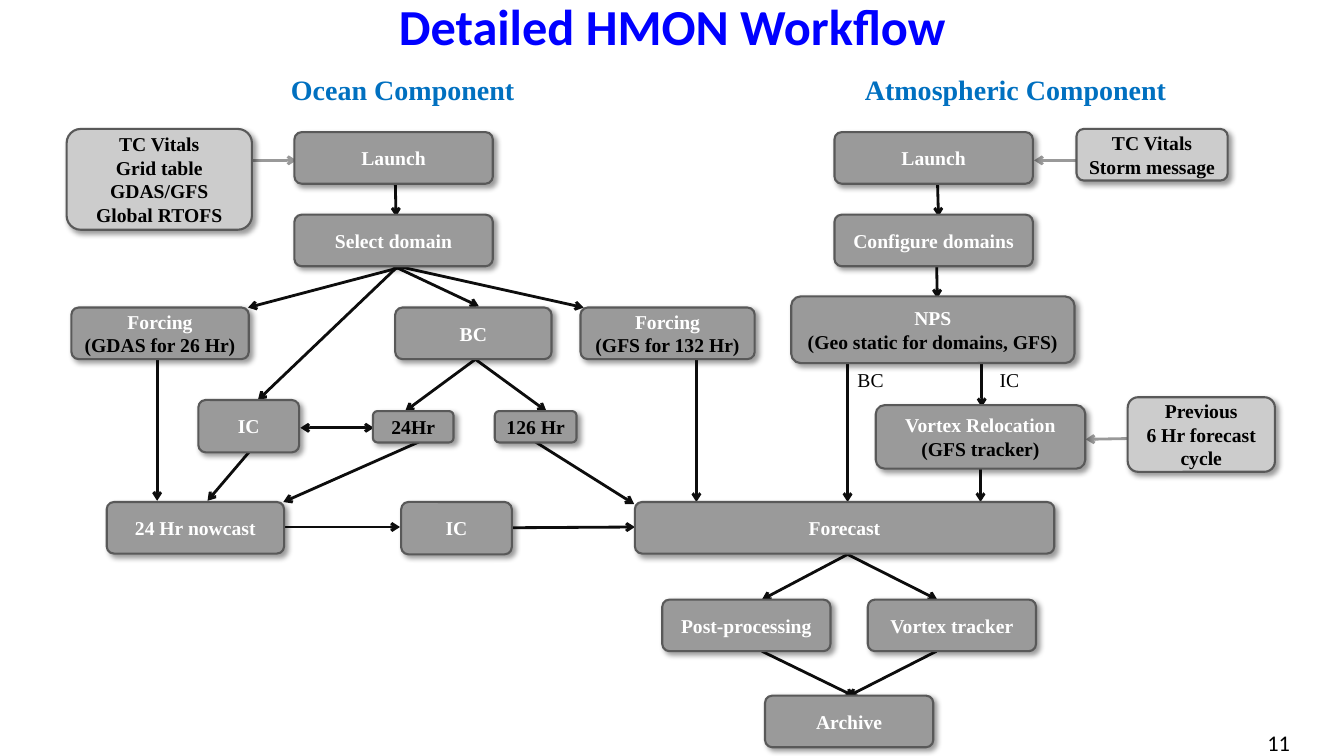
from dataclasses import dataclass

from lxml import etree
from pptx import Presentation
from pptx.dml.color import RGBColor
from pptx.enum.shapes import MSO_CONNECTOR, MSO_SHAPE
from pptx.enum.text import MSO_ANCHOR, PP_ALIGN
from pptx.oxml import parse_xml
from pptx.oxml.ns import nsdecls, qn
from pptx.util import Cm, Pt

STRAIGHT = MSO_CONNECTOR.STRAIGHT
ROUNDED = MSO_SHAPE.ROUNDED_RECTANGLE
TOP, MIDDLE = MSO_ANCHOR.TOP, MSO_ANCHOR.MIDDLE
LEFT, CENTER, RIGHT = PP_ALIGN.LEFT, PP_ALIGN.CENTER, PP_ALIGN.RIGHT


@dataclass(frozen=True)
class Theme:
    title: str = "0000FF"
    heading: str = "0070C0"
    step: str = "9A9A9A"
    source: str = "CCCCCC"
    border: str = "595959"
    flow: str = "0D0D0D"
    feed: str = "999999"
    white: str = "FFFFFF"
    black: str = "000000"
    sans: str = "Calibri"
    serif: str = "Times New Roman"
    title_size: int = 36
    heading_size: int = 20
    number_size: int = 16
    body_size: int = 14


theme = Theme()


def write(shape, text, *, color=theme.black, detail_color=None, size=theme.body_size,
          font=theme.serif, bold=False, align=LEFT, anchor=TOP):
    frame = shape.text_frame
    frame.word_wrap = True
    frame.vertical_anchor = anchor
    for index, line in enumerate(text.split("\n")):
        paragraph = frame.add_paragraph() if index else frame.paragraphs[0]
        paragraph.alignment = align
        run = paragraph.add_run()
        run.text = line
        run.font.name = font
        run.font.size = Pt(size)
        run.font.bold = bold
        line_color = detail_color if index and detail_color else color
        run.font.color.rgb = RGBColor.from_string(line_color)


presentation = Presentation()
presentation.slide_width = Cm(33.87)
presentation.slide_height = Cm(19.05)
slide = presentation.slides.add_slide(presentation.slide_layouts[6])

flow_arrows = [
    (6.68, 13.28, 10.08, 13.28),
    (12.6, 13.3, 16, 13.28),
    (9.98, 6.7, 14.71, 7.75),
    (9.8, 6.65, 12.07, 7.72),
    (10.06, 6.68, 6.5, 10.08),
    (10.31, 6.68, 6.25, 7.75),
    (9.96, 4.45, 9.98, 5.46),
    (11.96, 9.07, 10.21, 10.36),
    (11.96, 9.04, 13.77, 10.36),
    (7.95, 10.78, 9.42, 10.78),
    (9.04, 10.78, 7.57, 10.78),
    (3.96, 8.99, 3.96, 12.62),
    (6.27, 11.4, 5.23, 12.62),
    (10.57, 11.13, 7.14, 12.65),
    (13.31, 11.02, 15.98, 12.7),
    (17.55, 9.04, 17.55, 12.65),
    (23.62, 4.39, 23.65, 5.46),
    (23.6, 6.45, 23.62, 7.52),
    (21.36, 9.07, 21.36, 12.65),
    (24.74, 9.07, 24.74, 10.26),
    (24.71, 11.4, 24.71, 12.65),
    (21.36, 13.97, 19.2, 15.11),
    (21.36, 13.97, 23.62, 15.11),
    (19.2, 16.41, 21.54, 17.55),
    (23.6, 16.41, 21.36, 17.55),
]
feed_arrows = [
    (6.32, 4.04, 7.47, 4.04),
    (27.15, 4.04, 26.06, 4.04),
    (28.45, 11.05, 27.36, 11.07),
]
for color, arrows in ((theme.flow, flow_arrows), (theme.feed, feed_arrows)):
    for ends in arrows:
        arrow = slide.shapes.add_connector(STRAIGHT, *map(Cm, ends))
        arrow.line.color.rgb = RGBColor.from_string(color)
        arrow.line.width = Pt(2)
        etree.SubElement(arrow.line._get_or_add_ln(), qn("a:tailEnd"), type="arrow")
        etree.SubElement(arrow._element.spPr, qn("a:effectLst"))

white_steps = [
    ("Launch", 7.42, 3.33, 5, 1.3),
    ("Select domain", 7.42, 5.41, 5, 1.3),
    ("Forcing\n(GDAS for 26 Hr)", 1.8, 7.75, 4.47, 1.3),
    ("BC", 9.96, 7.75, 3.94, 1.3),
    ("Forcing\n(GFS for 132 Hr)", 14.63, 7.75, 4.39, 1.3),
    ("IC", 5, 10.08, 2.54, 1.32),
    ("24 Hr nowcast", 2.69, 12.65, 4.47, 1.3),
    ("IC", 10.11, 12.65, 2.79, 1.32),
    ("Launch", 21.03, 3.33, 5, 1.3),
    ("Configure domains", 21.03, 5.41, 5, 1.3),
    ("NPS\n(Geo static for domains, GFS)", 19.94, 7.47, 7.14, 1.68),
    ("Vortex Relocation\n(GFS tracker)", 22.07, 10.21, 5.28, 1.6),
    ("Forecast", 16, 12.65, 10.57, 1.3),
    ("Post-processing", 16.69, 15.11, 4.24, 1.3),
    ("Vortex tracker", 21.87, 15.11, 4.24, 1.3),
    ("Archive", 19.28, 17.53, 4.24, 1.3),
]
black_steps = [
    ("24Hr", 9.4, 10.36, 2.03, 0.79),
    ("126 Hr", 12.47, 10.36, 2.06, 0.79),
]
sources = [
    ("TC Vitals\nGrid table\nGDAS/GFS\nGlobal RTOFS", 1.68, 3.25, 4.67, 2.54),
    ("TC Vitals\nStorm message", 27.13, 3.25, 3.81, 1.3),
    ("Previous\n6 Hr forecast cycle", 28.42, 10.01, 3.71, 1.88),
]
box_groups = [
    (theme.step, theme.white, white_steps),
    (theme.step, theme.black, black_steps),
    (theme.source, theme.black, sources),
]
for fill, color, boxes in box_groups:
    for text, *place in boxes:
        box = slide.shapes.add_shape(ROUNDED, *map(Cm, place))
        box.adjustments[0] = 0.14
        box.fill.solid()
        box.fill.fore_color.rgb = RGBColor.from_string(fill)
        box.line.color.rgb = RGBColor.from_string(theme.border)
        box.line.width = Pt(1.5)
        box._element.spPr.append(parse_xml(
            f'<a:effectLst {nsdecls("a")}>'
            f'<a:outerShdw blurRad="{Pt(4)}" dist="{Pt(3)}" dir="2700000" algn="tl" rotWithShape="0">'
            f'<a:srgbClr val="{theme.black}"><a:alpha val="40000"/></a:srgbClr>'
            '</a:outerShdw></a:effectLst>'))
        write(box, text, color=color, detail_color=theme.black, bold=True,
              align=CENTER, anchor=MIDDLE)

title_format = dict(color=theme.title, size=theme.title_size, font=theme.sans, bold=True)
heading_format = dict(color=theme.heading, size=theme.heading_size, bold=True, align=CENTER)
number_format = dict(size=theme.number_size, font=theme.sans, align=RIGHT, anchor=MIDDLE)
labels = [
    ("Detailed HMON Workflow", (9.8, -0.25, 14.73, 1.78), title_format),
    ("Ocean Component", (6.25, 1.7, 7.8, 1.02), heading_format),
    ("Atmospheric Component", (20.5, 1.7, 10.19, 1.02), heading_format),
    ("BC", (21.36, 9.14, 1.93, 0.84), {}),
    ("IC", (24.94, 9.14, 2.18, 0.84), {}),
    ("11", (31.52, 18.19, 1.24, 1.02), number_format),
]
for text, place, text_format in labels:
    write(slide.shapes.add_textbox(*map(Cm, place)), text, **text_format)

presentation.save("out.pptx")
